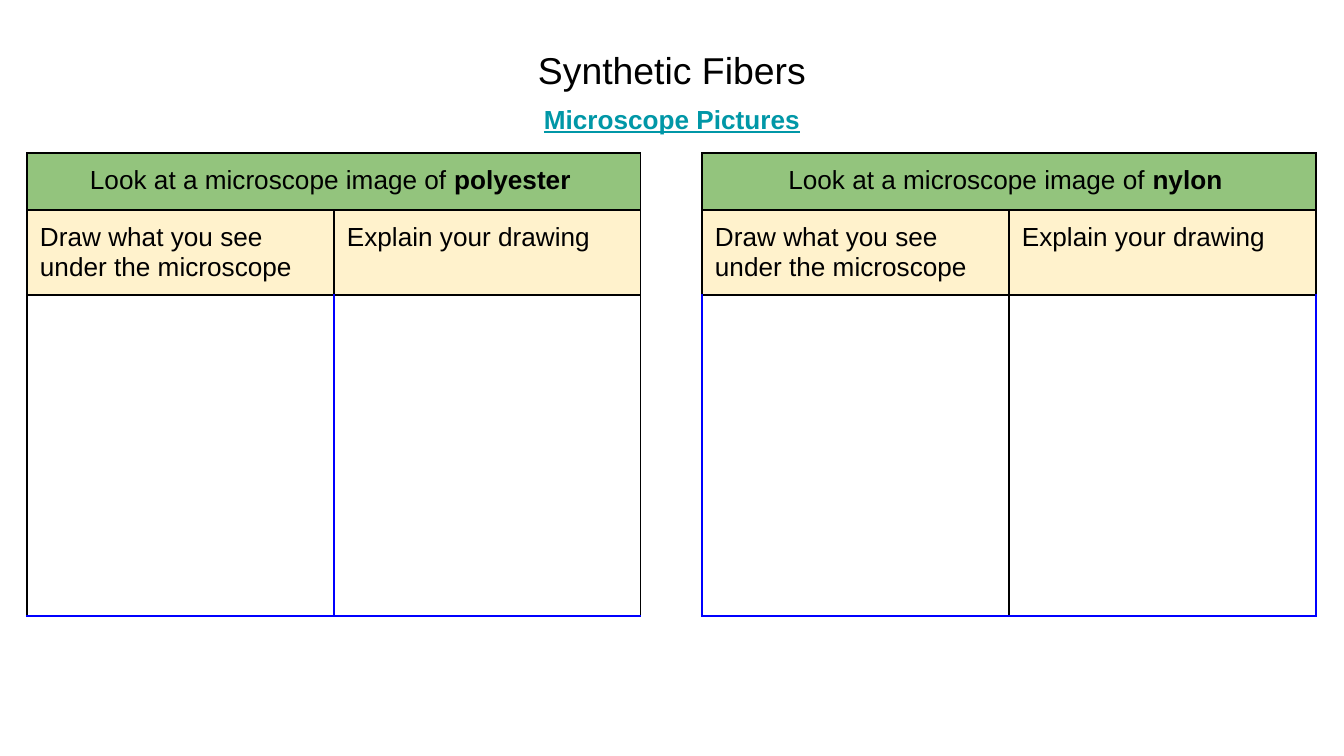
"""Builds a worksheet slide for comparing synthetic fibers under a microscope."""
from lxml import etree
from pptx import Presentation
from pptx.dml.color import RGBColor
from pptx.enum.text import PP_ALIGN
from pptx.oxml.ns import qn
from pptx.util import Emu, Pt

PX = 914400 / 134.4
LEFT, CENTER = PP_ALIGN.LEFT, PP_ALIGN.CENTER
BLACK, BLUE, TEAL = "000000", "0000FF", "0097A7"
GREEN, CREAM = "93C47D", "FFF2CC"


def px(length):
    return Emu(round(length * PX))


def color(code):
    return RGBColor.from_string(code)


def write(paragraph, text, size=14, ink=BLACK, bold=False, underline=False, align=LEFT):
    paragraph.alignment = align
    run = paragraph.add_run()
    run.text = text
    font = run.font
    font.name, font.size = "Arial", Pt(size)
    font.bold, font.underline = bold, underline
    font.color.rgb = color(ink)


class Worksheet:
    inset = 13
    border = Pt(0.75)
    column_width = 307
    row_heights = (57, 85, 321)

    def __init__(self, slide):
        self.slide = slide

    def pad(self, holder):
        holder.margin_left = holder.margin_right = px(self.inset)
        holder.margin_top = holder.margin_bottom = px(self.inset)

    def heading(self, left, top, width, height, text, **style):
        frame = self.slide.shapes.add_textbox(*map(px, (left, top, width, height))).text_frame
        frame.word_wrap = True
        self.pad(frame)
        write(frame.paragraphs[0], text, align=CENTER, **style)

    def outline(self, cell, left, right, top, bottom):
        properties = cell._tc.get_or_add_tcPr()
        sides = zip(("a:lnL", "a:lnR", "a:lnT", "a:lnB"), (left, right, top, bottom))
        for position, (side, ink) in enumerate(sides):
            line = etree.Element(qn(side), w=str(self.border))
            fill = etree.SubElement(line, qn("a:solidFill"))
            etree.SubElement(fill, qn("a:srgbClr"), val=ink)
            properties.insert(position, line)

    def fiber_table(self, left, top, fiber, edges):
        width, height = 2 * self.column_width, sum(self.row_heights)
        table = self.slide.shapes.add_table(3, 2, *map(px, (left, top, width, height))).table
        table.first_row = table.horz_banding = False
        for column in table.columns:
            column.width = px(self.column_width)
        for row, row_height in zip(table.rows, self.row_heights):
            row.height = px(row_height)

        for row_index, fill in enumerate((GREEN, CREAM, None)):
            for column_index in range(2):
                cell = table.cell(row_index, column_index)
                self.pad(cell)
                if fill:
                    cell.fill.solid()
                    cell.fill.fore_color.rgb = color(fill)
                    self.outline(cell, BLACK, BLACK, BLACK, BLACK)
                else:
                    cell.fill.background()
                    self.outline(cell, *edges[column_index:column_index + 2], BLACK, BLUE)

        title = table.cell(0, 0)
        title.merge(table.cell(0, 1))
        title_line = title.text_frame.paragraphs[0]
        write(title_line, "Look at a microscope image of ", align=CENTER)
        write(title_line, f"{fiber} ", bold=True, align=CENTER)
        prompts = ("Draw what you see under the microscope", "Explain your drawing")
        for column_index, prompt in enumerate(prompts):
            write(table.cell(1, column_index).text_frame.paragraphs[0], prompt)


def main():
    deck = Presentation()
    deck.slide_width, deck.slide_height = px(1344), px(756)
    sheet = Worksheet(deck.slides.add_slide(deck.slide_layouts[6]))
    sheet.fiber_table(27, 153, "polyester", (BLACK, BLUE, BLACK))
    sheet.fiber_table(702, 153, "nylon", (BLUE, BLACK, BLUE))
    sheet.heading(498, 34, 348, 73, "Synthetic Fibers", size=20)
    sheet.heading(527, 90, 290, 36, "Microscope Pictures", ink=TEAL, bold=True, underline=True)
    deck.save("out.pptx")


if __name__ == "__main__":
    main()
